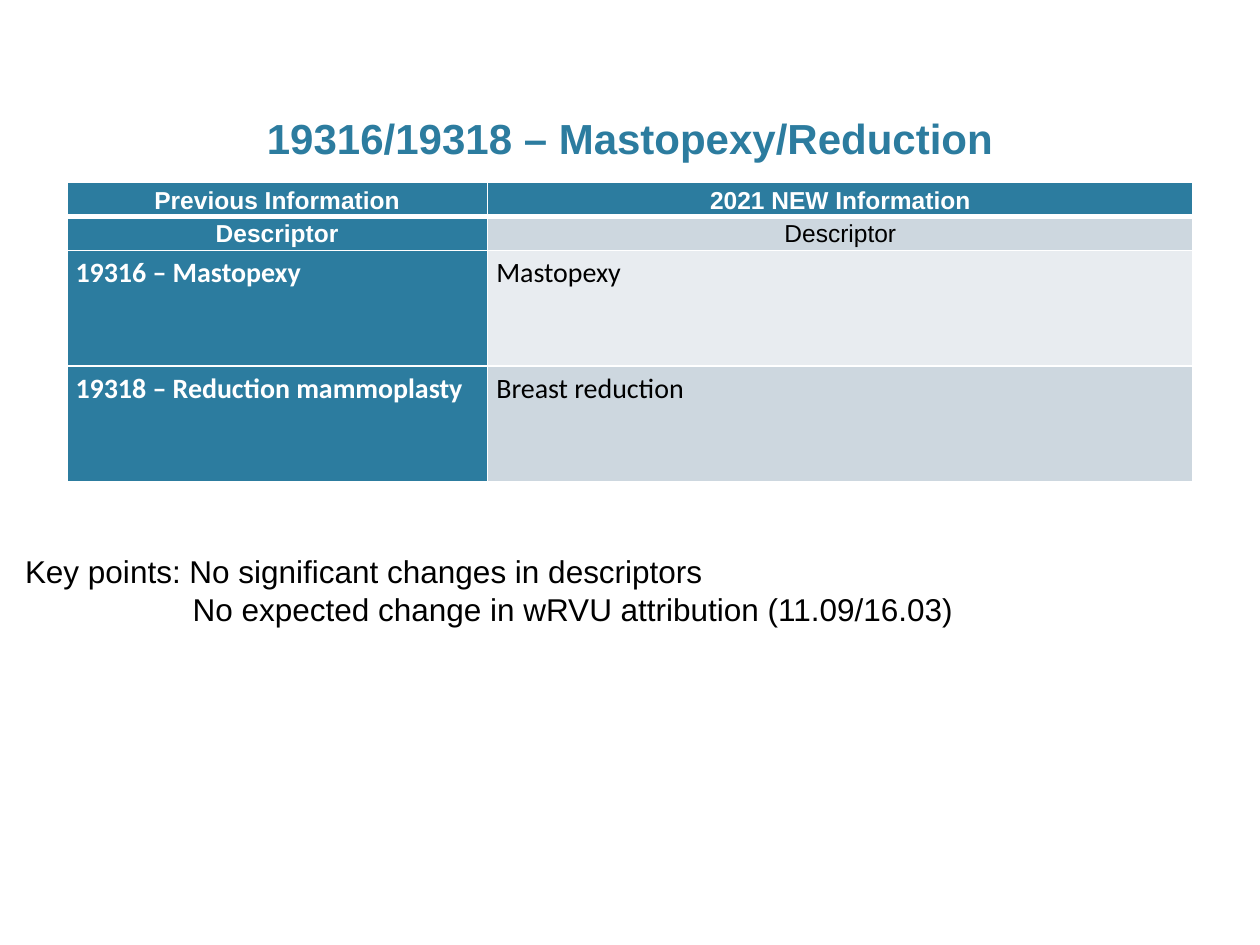
from dataclasses import dataclass

from lxml import etree
from pptx import Presentation
from pptx import util as u
from pptx.dml import color
from pptx.enum import text as t
from pptx.oxml import ns


@dataclass(frozen=True)
class Theme:
    teal: str = "2C7C9F"
    band_dark: str = "CDD7DF"
    band_light: str = "E8ECF0"
    white: str = "FFFFFF"
    black: str = "000000"
    heading_font: str = "Arial"
    code_font: str = "Calibri"
    title_size: int = 24
    body_size: int = 18
    code_size: int = 16
    header_size: int = 14
    rule: int = 1
    heavy_rule: int = 3


def write_text(paragraph, text, *, size, font, ink, bold=False,
               align=t.PP_ALIGN.LEFT, spacing=None, indent=None):
    if indent is not None:
        paragraph._p.get_or_add_pPr().set("marL", str(indent))
    paragraph.alignment = align
    if spacing is not None:
        paragraph.line_spacing = spacing
    run = paragraph.add_run()
    run.text = text
    run.font.size = u.Pt(size)
    run.font.name = font
    run.font.bold = bold
    run.font.color.rgb = color.RGBColor.from_string(ink)


class SlideBuilder:
    COLUMNS, ROWS = 100, 75

    def __init__(self, presentation, theme):
        self.theme = theme
        self.slide = presentation.slides.add_slide(presentation.slide_layouts[6])
        self.column = presentation.slide_width / self.COLUMNS
        self.row = presentation.slide_height / self.ROWS

    def across(self, columns):
        return u.Emu(round(columns * self.column))

    def down(self, rows):
        return u.Emu(round(rows * self.row))

    def place(self, left, top, width, height):
        return self.across(left), self.down(top), self.across(width), self.down(height)

    def text_box(self, area, lines, anchor=t.MSO_ANCHOR.TOP, indents=None, **style):
        frame = self.slide.shapes.add_textbox(*self.place(*area)).text_frame
        frame.word_wrap = True
        frame.vertical_anchor = anchor
        for index, line in enumerate(lines):
            paragraph = frame.add_paragraph() if index else frame.paragraphs[0]
            indent = self.across(indents[index]) if indents else None
            write_text(paragraph, line, indent=indent, **style)

    def border(self, cell, side, points):
        properties = cell._tc.get_or_add_tcPr()
        line = etree.SubElement(properties, ns.qn(f"a:ln{side}"), w=str(u.Pt(points)))
        fill = etree.SubElement(line, ns.qn("a:solidFill"))
        etree.SubElement(fill, ns.qn("a:srgbClr"), val=self.theme.white)

    def cell(self, cell, text, fill, top_rule, bottom_rule, **style):
        rule = self.theme.rule
        for side, points in zip("LRTB", (rule, rule, top_rule, bottom_rule)):
            self.border(cell, side, points)
        cell.fill.solid()
        cell.fill.fore_color.rgb = color.RGBColor.from_string(fill)
        cell.margin_left = cell.margin_right = u.Inches(0.07)
        cell.margin_top = cell.margin_bottom = 0
        write_text(cell.text_frame.paragraphs[0], text, spacing=1.15, **style)

    def table(self, left, top, widths, heights, content, header_rows):
        theme = self.theme
        area = self.place(left, top, sum(widths), sum(heights))
        table = self.slide.shapes.add_table(len(heights), len(widths), *area).table
        table.first_row = table.horz_banding = False
        for column, width in zip(table.columns, widths):
            column.width = self.across(width)
        for number, (row, height) in enumerate(zip(table.rows, heights)):
            row.height = self.down(height)
            top_rule = theme.heavy_rule if number == 1 else theme.rule
            bottom_rule = theme.heavy_rule if number == 0 else theme.rule
            if number < header_rows:
                style = dict(size=theme.header_size, font=theme.heading_font,
                             align=t.PP_ALIGN.CENTER)
            else:
                style = dict(size=theme.code_size, font=theme.code_font)
            band = theme.band_dark if number % 2 else theme.band_light
            for position, text in enumerate(content[number]):
                strong = number == 0 or position == 0
                self.cell(row.cells[position], text,
                          theme.teal if strong else band, top_rule, bottom_rule,
                          ink=theme.white if strong else theme.black,
                          bold=strong, **style)


def main():
    presentation = Presentation()
    presentation.slide_width, presentation.slide_height = u.Inches(10), u.Inches(7.5)
    theme = Theme()
    builder = SlideBuilder(presentation, theme)

    builder.text_box((6, 3.3, 88, 10.1), ["19316/19318 – Mastopexy/Reduction"],
                     anchor=t.MSO_ANCHOR.BOTTOM, align=t.PP_ALIGN.CENTER, bold=True,
                     size=theme.title_size, font=theme.heading_font, ink=theme.teal)
    builder.table(5.3, 14.5, (33.4, 56), (1.8, 1.8, 9.2, 9.2), [
        ("Previous Information", "2021 NEW Information"),
        ("Descriptor", "Descriptor"),
        ("19316 – Mastopexy", "Mastopexy"),
        ("19318 – Reduction mammoplasty", "Breast reduction"),
    ], header_rows=2)
    builder.text_box((1, 43.3, 97.9, 10.1), [
        "Key points: No significant changes in descriptors",
        "No expected change in wRVU attribution (11.09/16.03)",
    ], indents=(0, 13.3), size=theme.body_size, font=theme.heading_font, ink=theme.black)

    presentation.save("out.pptx")


if __name__ == "__main__":
    main()
